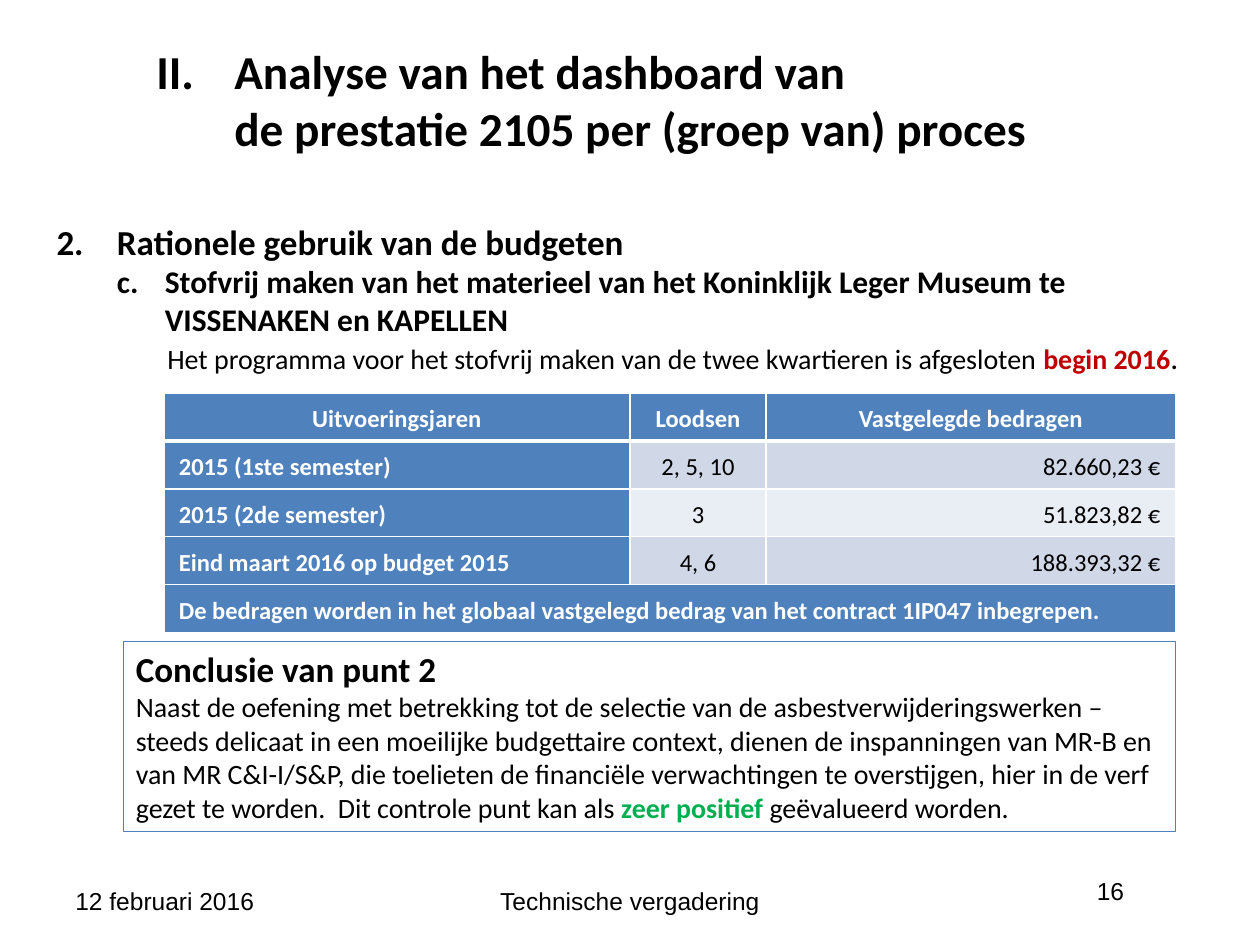
"""Build the slide on the rational use of budgets."""
from dataclasses import dataclass

from lxml import etree
from pptx import Presentation
from pptx.dml.color import RGBColor
from pptx.enum.shapes import MSO_SHAPE
from pptx.enum.text import MSO_ANCHOR, MSO_AUTO_SIZE, PP_ALIGN
from pptx.oxml.ns import qn
from pptx.util import Pt

PX = 9144
RECT = MSO_SHAPE.RECTANGLE
MIDDLE, TOP = MSO_ANCHOR.MIDDLE, MSO_ANCHOR.TOP
LEFT, CENTER, RIGHT = PP_ALIGN.LEFT, PP_ALIGN.CENTER, PP_ALIGN.RIGHT
FIXED, GROW = MSO_AUTO_SIZE.NONE, MSO_AUTO_SIZE.SHAPE_TO_FIT_TEXT
BLACK, WHITE, BLUE = "000000", "FFFFFF", "4F81BD"
RED, GREEN = "C00000", "00B050"
BANDS = ("D0D8E8", "E9EDF4")


@dataclass(frozen=True)
class Run:
    """A piece of text in one format."""
    text: str
    size: int
    bold: bool = False
    color: str = BLACK
    font: str = "Calibri"


@dataclass(frozen=True)
class Para:
    """A paragraph with its alignment, indent and number."""
    runs: tuple[Run, ...]
    align: PP_ALIGN = LEFT
    margin: int = 0
    hang: int = 0
    number: str = ""
    start: int = 1


@dataclass(frozen=True)
class Box:
    """A place on the slide in px."""
    left: int
    top: int
    width: int
    height: int

    def emu(self) -> list[int]:
        """Give the four lengths in EMU."""
        return [n * PX for n in (self.left, self.top, self.width, self.height)]


def rgb(code: str) -> RGBColor:
    """Turn a hex string into a colour."""
    return RGBColor.from_string(code)


def apply(item: object, values: dict) -> None:
    """Set each named value on an object."""
    for name, value in values.items():
        setattr(item, name, value)


def fill_para(para, data: Para) -> None:
    """Write one paragraph."""
    props = para._p.get_or_add_pPr()
    if data.margin:
        props.set("marL", str(data.margin * PX))
        props.set("indent", str(-data.hang * PX))
    if data.number:
        etree.SubElement(props, qn("a:buAutoNum"), type=data.number, startAt=str(data.start))
    para.alignment = data.align
    for part in data.runs:
        for i, line in enumerate(part.text.split("\n")):
            if i:
                para.add_line_break()
            run = para.add_run()
            run.text = line
            apply(run.font, {"size": Pt(part.size), "bold": part.bold, "name": part.font})
            run.font.color.rgb = rgb(part.color)


def fill_frame(frame, paras: list[Para], anchor: MSO_ANCHOR = TOP, fit: MSO_AUTO_SIZE = FIXED) -> None:
    """Write all paragraphs of a text frame."""
    apply(frame, {"word_wrap": True, "auto_size": fit, "vertical_anchor": anchor})
    for i, data in enumerate(paras):
        fill_para(frame.add_paragraph() if i else frame.paragraphs[0], data)


def add_text(slide, box: Box, paras: list[Para], fit: MSO_AUTO_SIZE = FIXED) -> None:
    """Add a text box."""
    fill_frame(slide.shapes.add_textbox(*box.emu()).text_frame, paras, fit=fit)


def add_panel(slide, box: Box, paras: list[Para]) -> None:
    """Add the outlined box with the conclusion."""
    panel = slide.shapes.add_shape(RECT, *box.emu())
    panel.shadow.inherit = False
    panel.fill.background()
    panel.line.color.rgb = rgb(BLUE)
    panel.line.width = Pt(0.75)
    fill_frame(panel.text_frame, paras, fit=GROW)


def add_edge(cell, side: str, width: int) -> None:
    """Draw a white border on one side of a cell."""
    props = cell._tc.get_or_add_tcPr()
    line = etree.SubElement(props, qn(f"a:ln{side}"), w=str(Pt(width)))
    solid = etree.SubElement(line, qn("a:solidFill"))
    etree.SubElement(solid, qn("a:srgbClr"), val=WHITE)


def fill_cell(cell, text: str, row: int, col: int) -> None:
    """Style and write one cell."""
    dark = row == 0 or col == 0 or not text
    for side in "LRTB":
        add_edge(cell, side, 3 if (row, side) in ((0, "B"), (1, "T")) else 1)
    cell.fill.solid()
    cell.fill.fore_color.rgb = rgb(BLUE if dark else BANDS[(row - 1) % 2])
    apply(cell, {"margin_left": 12 * PX, "margin_right": 12 * PX, "margin_top": 0,
                 "margin_bottom": 0, "vertical_anchor": MIDDLE})
    if text:
        align = CENTER if row == 0 else (LEFT, CENTER, RIGHT)[col]
        para = cell.text_frame.paragraphs[0]
        fill_para(para, Para((Run(text, 14, dark, WHITE if dark else BLACK),), align))
        para.line_spacing = 1.15


def add_grid(slide, box: Box, widths: list[int], rows: list[list[str]]) -> None:
    """Add the table, its last row merged."""
    table = slide.shapes.add_table(len(rows), len(widths), *box.emu()).table
    for col, width in zip(table.columns, widths):
        col.width = width * PX
    for r, texts in enumerate(rows):
        for c, text in enumerate(texts):
            fill_cell(table.cell(r, c), text, r, c)
    last = len(rows) - 1
    table.cell(last, 0).merge(table.cell(last, len(widths) - 1))


TITLE = Para((Run("Analyse van het dashboard van \nde prestatie 2105 per (groep van) proces", 27, True),),
             LEFT, 62, 62, "romanUcPeriod", 2)
BODY = [
    Para((Run("Rationele gebruik van de budgeten", 20, True),), LEFT, 48, 48, "arabicPeriod", 2),
    Para((Run("Stofvrij maken van het materieel van het Koninklijk Leger Museum te "
              "VISSENAKEN en KAPELLEN", 18, True),), LEFT, 86, 38, "alphaLcPeriod", 3),
    Para((Run("Het programma voor het stofvrij maken van de twee kwartieren is afgesloten ", 16),
          Run("begin 2016", 16, True, RED), Run(".", 18)), LEFT, 88),
]
ROWS = [
    ["Uitvoeringsjaren", "Loodsen", "Vastgelegde bedragen"],
    ["2015 (1ste semester)", "2, 5, 10", "82.660,23 €"],
    ["2015 (2de semester)", "3", "51.823,82 €"],
    ["Eind maart 2016 op budget 2015", "4, 6", "188.393,32 €"],
    ["De bedragen worden in het globaal vastgelegd bedrag van het contract 1IP047 inbegrepen.", "", ""],
]
CLOSE = [
    Para((Run("Conclusie van punt 2", 20, True),)),
    Para((Run("Naast de oefening met betrekking tot de selectie van de asbestverwijderingswerken – "
              "steeds delicaat in een moeilijke budgettaire context, dienen de inspanningen van MR-B "
              "en van MR C&I-I/S&P, die toelieten de financiële verwachtingen te overstijgen, hier in "
              "de verf gezet te worden.  Dit controle punt kan als ", 16),
          Run("zeer positief ", 16, True, GREEN), Run("geëvalueerd worden.", 16))),
]
FOOT = [
    (Box(717, 690, 185, 52), "16", RIGHT),
    (Box(50, 698, 233, 37), "12 februari 2016", LEFT),
    (Box(311, 698, 378, 37), "Technische vergadering", CENTER),
]


def main() -> None:
    """Build and save the slide."""
    deck = Presentation()
    apply(deck, {"slide_width": 1000 * PX, "slide_height": 750 * PX})
    slide = deck.slides.add_slide(deck.slide_layouts[5])
    title = slide.shapes.title
    apply(title, dict(zip(("left", "top", "width", "height"), Box(114, 36, 788, 85).emu())))
    fill_frame(title.text_frame, [TITLE], MIDDLE)
    add_text(slide, Box(35, 170, 945, 135), BODY, GROW)
    add_grid(slide, Box(130, 312, 803, 190), [370, 108, 325], ROWS)
    add_panel(slide, Box(98, 509, 835, 151), CLOSE)
    for box, text, align in FOOT:
        add_text(slide, box, [Para((Run(text, 14, font="Arial"),), align)])
    deck.save("out.pptx")


if __name__ == "__main__":
    main()
